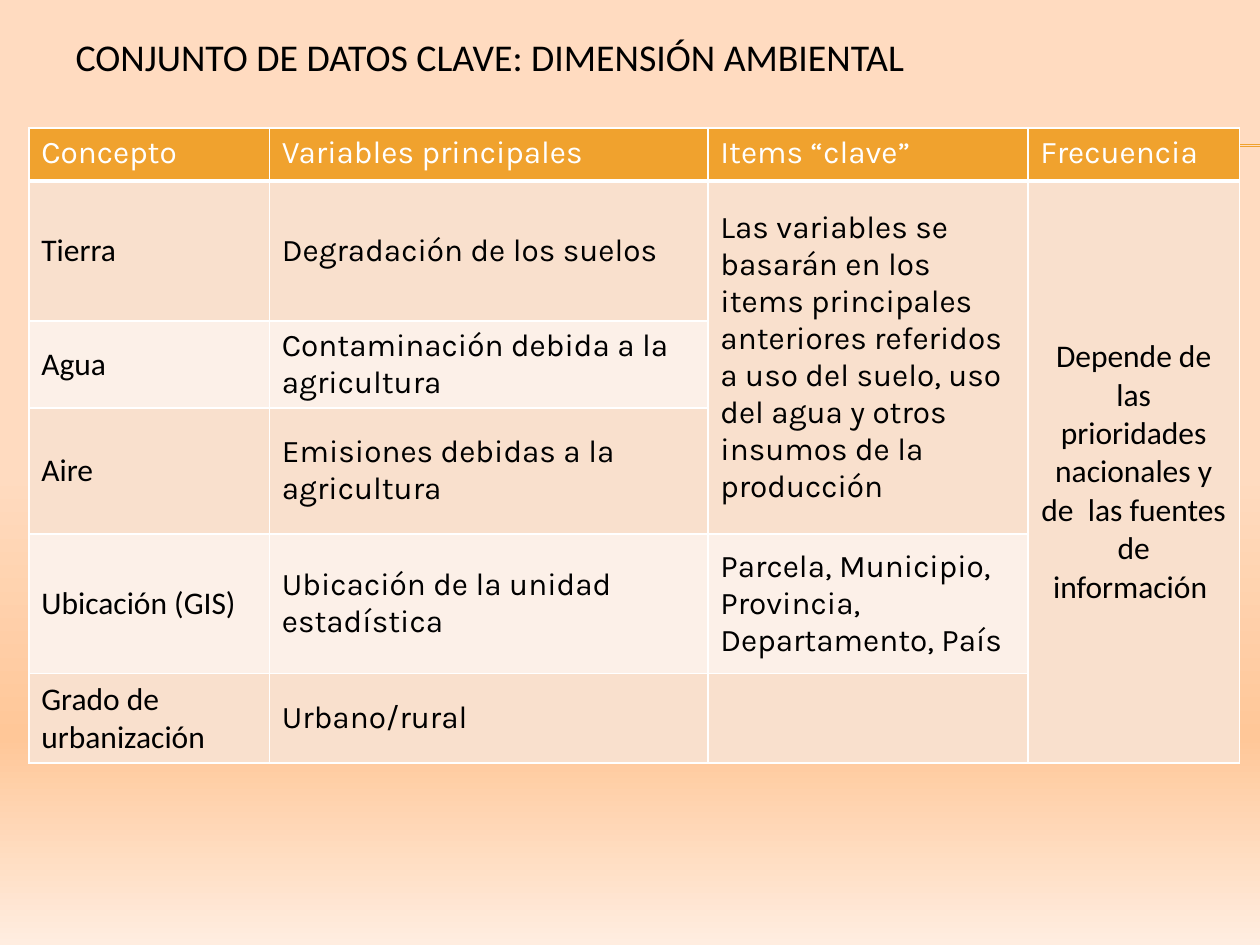
from lxml import etree
from pptx import Presentation
from pptx.dml.color import RGBColor
from pptx.enum.shapes import MSO_CONNECTOR
from pptx.enum.text import MSO_ANCHOR, PP_ALIGN
from pptx.oxml.ns import qn
from pptx.util import Cm, Pt

STRAIGHT = MSO_CONNECTOR.STRAIGHT
TOP, MIDDLE = MSO_ANCHOR.TOP, MSO_ANCHOR.MIDDLE
LEFT, CENTER = PP_ALIGN.LEFT, PP_ALIGN.CENTER

THEME = {
    "accent": "F0A22E", "white": "FFFFFF", "black": "000000",
    "bands": ("F9E0CD", "FCF0E8"),
    "backdrop": ((0, "FFDBC0"), (50, "FFDBC0"), (78, "FFC798"), (100, "FFEDE0")),
    "title_size": 21.6, "body_size": 18,
    "title_font": "Calibri", "column_fonts": ("Calibri", "Karla", "Karla", "Calibri"),
    "header_font": "Karla",
}

TITLE = "CONJUNTO DE DATOS CLAVE: DIMENSIÓN AMBIENTAL"
ROWS = [
    ("Concepto", "Variables principales", "Items “clave”", "Frecuencia"),
    ("Tierra", "Degradación de los suelos",
     "Las variables se basarán en los items principales anteriores referidos "
     "a uso del suelo, uso del agua y otros insumos de la producción",
     "Depende de las prioridades nacionales y de  las fuentes de información "),
    ("Agua", "Contaminación debida a la agricultura", "", ""),
    ("Aire", "Emisiones debidas a la agricultura", "", ""),
    ("Ubicación (GIS)", "Ubicación de la unidad estadística",
     "Parcela, Municipio, Provincia, Departamento, País", ""),
    ("Grado de urbanización", "Urbano/rural", "", ""),
]
MERGES = [((1, 2), (3, 2)), ((1, 3), (5, 3))]
COL_WIDTHS = (4.85, 8.84, 6.45, 4.27)
ROW_HEIGHTS = (1.07, 2.82, 1.75, 2.54, 2.82, 1.8)
RULE_LEVELS = (2.92, 2.95)


def rgb(value):
    return RGBColor.from_string(value)


def style_text(tf, font, size, color, align=LEFT):
    for p in tf.paragraphs:
        p.alignment = align
        for r in p.runs:
            r.font.name = font
            r.font.size = Pt(size)
            r.font.color.rgb = rgb(color)


def paint_backdrop(s):
    fill = s.background.fill
    fill.gradient()
    fill.gradient_angle = 270
    stops = next(s.element.iter(qn("a:gsLst")))
    for stop in list(stops):
        stops.remove(stop)
    for position, color in THEME["backdrop"]:
        stop = etree.SubElement(stops, qn("a:gs"), pos=str(position * 1000))
        etree.SubElement(stop, qn("a:srgbClr"), val=color)


def add_rule(s, y):
    line = s.shapes.add_connector(STRAIGHT, Cm(1.42), Cm(y), Cm(25.4), Cm(y))
    line.line.color.rgb = rgb(THEME["accent"])
    line.line.width = Pt(0.75)
    etree.SubElement(line.element.spPr, qn("a:effectLst"))


def set_borders(cell, bottom):
    tc_pr = cell._tc.get_or_add_tcPr()
    sides = (("a:lnL", 1), ("a:lnR", 1), ("a:lnT", 1), ("a:lnB", bottom))
    for index, (side, width) in enumerate(sides):
        ln = etree.Element(qn(side), w=str(Pt(width)))
        solid = etree.SubElement(ln, qn("a:solidFill"))
        etree.SubElement(solid, qn("a:srgbClr"), val=THEME["white"])
        tc_pr.insert(index, ln)


def add_data_table(s):
    frame = s.shapes.add_table(len(ROWS), len(COL_WIDTHS), Cm(0.58), Cm(2.58),
                               Cm(sum(COL_WIDTHS)), Cm(sum(ROW_HEIGHTS)))
    table = frame.table
    for column, width in zip(table.columns, COL_WIDTHS):
        column.width = Cm(width)
    for row, height in zip(table.rows, ROW_HEIGHTS):
        row.height = Cm(height)
    for start, end in MERGES:
        table.cell(*start).merge(table.cell(*end))

    for i, row in enumerate(ROWS):
        header = i == 0
        for j, text in enumerate(row):
            cell = table.cell(i, j)
            cell.fill.solid()
            cell.fill.fore_color.rgb = rgb(
                THEME["accent"] if header else THEME["bands"][(i - 1) % 2])
            cell.vertical_anchor = TOP if header else MIDDLE
            set_borders(cell, 3 if header else 1)
            if text:
                cell.text_frame.text = text
                style_text(cell.text_frame,
                           THEME["header_font"] if header else THEME["column_fonts"][j],
                           THEME["body_size"],
                           THEME["white"] if header else THEME["black"],
                           CENTER if j == 3 and not header else LEFT)


def main():
    prs = Presentation()
    prs.slide_width, prs.slide_height = Cm(25.4), Cm(19.05)
    s = prs.slides.add_slide(prs.slide_layouts[5])
    paint_backdrop(s)
    for y in RULE_LEVELS:
        add_rule(s, y)

    title = s.shapes.title
    title.left, title.top, title.width, title.height = Cm(1.27), Cm(0.89), Cm(20.12), Cm(1.3)
    tf = title.text_frame
    tf.text = TITLE
    tf.vertical_anchor = MIDDLE
    tf.margin_top, tf.margin_bottom = Cm(0), Cm(0.81)
    style_text(tf, THEME["title_font"], THEME["title_size"], THEME["black"])

    add_data_table(s)
    prs.save("out.pptx")


if __name__ == "__main__":
    main()
